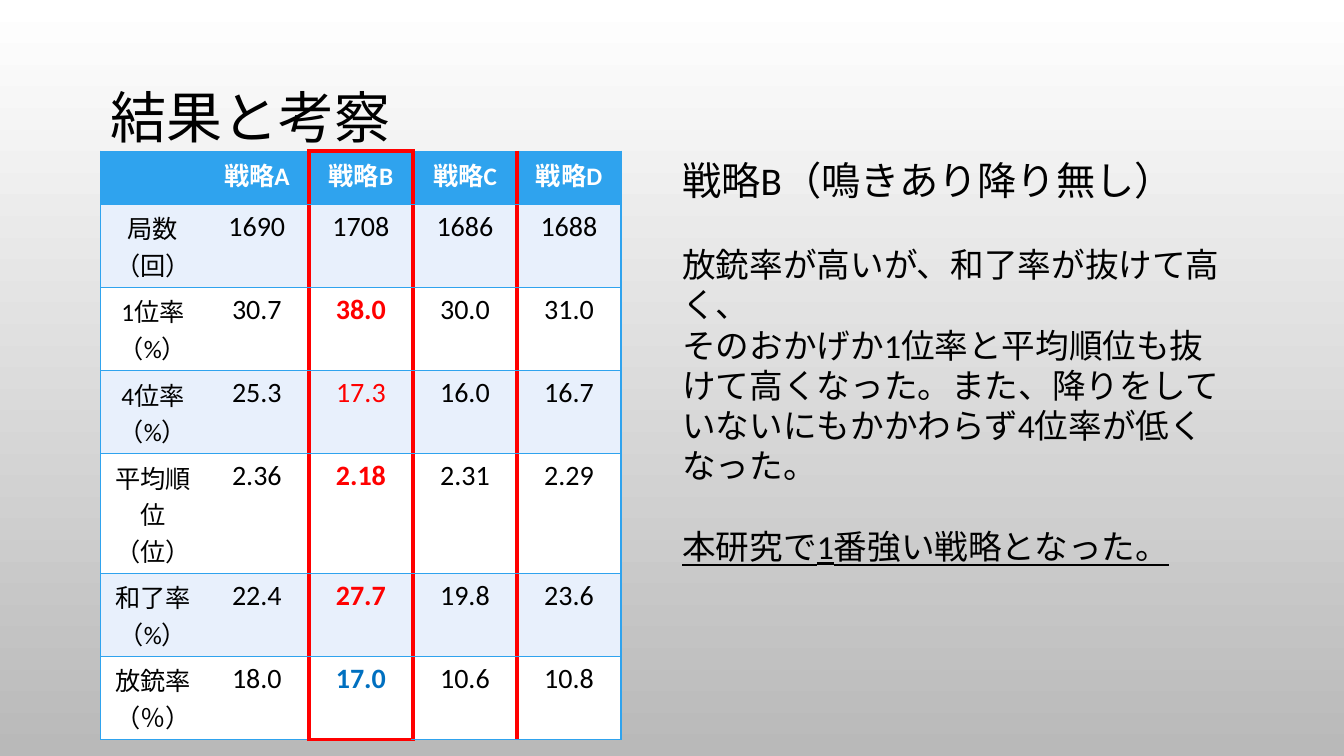
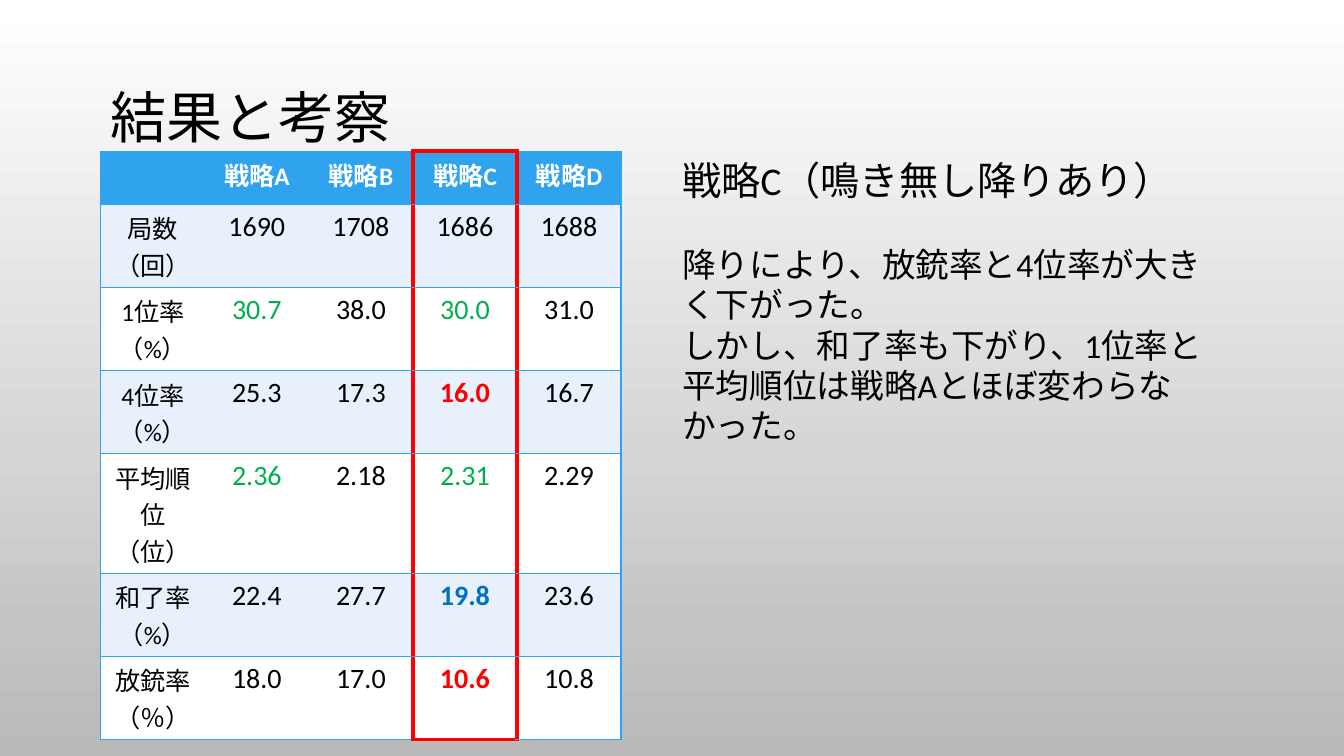
from lxml import etree
from pptx import Presentation
from pptx.dml.color import RGBColor
from pptx.enum import lang, text as t
from pptx.oxml import ns
from pptx.util import Inches, Pt

BLACK = RGBColor(0x00, 0x00, 0x00)
WHITE = RGBColor(0xFF, 0xFF, 0xFF)
GREY = RGBColor(0xB9, 0xB9, 0xB9)
SKY = RGBColor(0x2F, 0xA3, 0xEE)
PALE = RGBColor(0xE8, 0xF0, 0xFC)
RED = RGBColor(0xFF, 0x00, 0x00)
BLUE = RGBColor(0x00, 0x70, 0xC0)
GREEN = RGBColor(0x00, 0xB0, 0x50)

FONT = "Calibri"
PLAIN = "{2D5ABB26-0587-4C30-8999-92F81FD0307C}"  # table style without grid
HEIGHTS = [0.53, 0.77, 0.77, 0.77, 0.92, 0.77, 0.77]
DATA = [
    ["", "戦略A", "戦略B", "戦略C", "戦略D"],
    ["局数（回）", "1690", "1708", "1686", "1688"],
    ["1位率（%）", "30.7", "38.0", "30.0", "31.0"],
    ["4位率（%）", "25.3", "17.3", "16.0", "16.7"],
    ["平均順位（位）", "2.36", "2.18", "2.31", "2.29"],
    ["和了率（%）", "22.4", "27.7", "19.8", "23.6"],
    ["放銃率（％）", "18.0", "17.0", "10.6", "10.8"],
]


def write(para, words, size=24, color=BLACK, bold=False, under=False,
          align=t.PP_ALIGN.LEFT, before=None, lines=None):
    """Put formatted text in a paragraph."""
    para.alignment = align
    if before:
        para.space_before = Pt(before)
    if lines:
        para.line_spacing = lines
    run = para.add_run()
    run.text = words
    font = run.font
    font.name, font.size, font.bold = FONT, Pt(size), bold
    font.underline = under
    font.color.rgb = color
    font.language_id = lang.MSO_LANGUAGE_ID.JAPANESE


def edge(cell, side, color, width):
    """Draw one border of a cell; sides go in the order L, R, T, B."""
    props = cell._tc.get_or_add_tcPr()
    line = etree.SubElement(props, ns.qn("a:ln" + side), w=str(Pt(width)))
    fill = etree.SubElement(line, ns.qn("a:solidFill"))
    etree.SubElement(fill, ns.qn("a:srgbClr"), val=str(color))


def head(slide, words, left, top, width, height):
    """Title placeholder."""
    box = slide.shapes.title
    box.left, box.top = Inches(left), Inches(top)
    box.width, box.height = Inches(width), Inches(height)
    frame = box.text_frame
    frame.auto_size = t.MSO_AUTO_SIZE.NONE
    frame.vertical_anchor = t.MSO_ANCHOR.MIDDLE
    write(frame.paragraphs[0], words, size=40, lines=0.9)


def grid(slide, left, top, width, pick, marks, extra):
    """Result table with the picked column framed in red."""
    rows, cols = len(DATA), len(DATA[0])
    frame = slide.shapes.add_table(rows, cols, Inches(left), Inches(top),
                                   Inches(width), Inches(sum(HEIGHTS)))
    table = frame.table
    table._tbl.tblPr.find(ns.qn("a:tableStyleId")).text = PLAIN
    for row, height in zip(table.rows, HEIGHTS):
        row.height = Inches(height)

    for r, line in enumerate(DATA):
        reds = {pick, pick + 1} | (set(extra) if r else set())
        for c, words in enumerate(line):
            cell = table.cell(r, c)
            # Borders
            for side, pos in (("L", c), ("R", c + 1)):
                if pos in reds:
                    edge(cell, side, RED, 3)
                elif pos in (0, cols):
                    edge(cell, side, SKY, 1)
            for side, pos in (("T", r), ("B", r + 1)):
                if c == pick and pos in (0, rows):
                    edge(cell, side, RED, 3)
                else:
                    edge(cell, side, SKY, 1)
            # Fill and text
            cell.fill.solid()
            cell.fill.fore_color.rgb = SKY if r == 0 else (PALE if r % 2 else WHITE)
            color, bold = marks.get(words, (BLACK, False)) if r else (WHITE, True)
            if words:
                write(cell.text_frame.paragraphs[0], words, color=color, bold=bold,
                      size=20 if r and c else 18, align=t.PP_ALIGN.CENTER)


def notes(slide, left, top, width, height, paras):
    """Comment beside the table: a list of (text, format)."""
    box = slide.shapes.add_textbox(Inches(left), Inches(top),
                                   Inches(width), Inches(height))
    frame = box.text_frame
    frame.word_wrap = True
    frame.auto_size = t.MSO_AUTO_SIZE.SHAPE_TO_FIT_TEXT
    for i, (words, style) in enumerate(paras):
        para = frame.add_paragraph() if i else frame.paragraphs[0]
        write(para, words, **style)


def page(deck, pick, marks, tall, paras, extra=()):
    """One result slide: title, table and comment."""
    slide = deck.slides.add_slide(deck.slide_layouts[5])
    head(slide, "結果と考察", 1, 0.68, 11.33, 1.02)
    grid(slide, 1, 1.5, 5.16, pick, marks, extra)
    notes(slide, 6.67, 1.5, 5.67, tall, paras)


def main():
    deck = Presentation()
    deck.slide_width, deck.slide_height = Inches(13.33), Inches(7.5)

    # Shared background
    fill = deck.slide_master.background.fill
    fill.gradient()
    fill.gradient_angle = 270
    for stop, color in zip(fill.gradient_stops, (WHITE, GREY)):
        stop.color.rgb = color

    # Strategy B
    page(deck, 2, {"38.0": (RED, True), "17.3": (RED, False), "2.18": (RED, True),
                   "27.7": (RED, True), "17.0": (BLUE, True)}, 3.4, [
        ("戦略B（鳴きあり降り無し）", dict(size=28)),
        ("放銃率が高いが、和了率が抜けて高く、", dict(before=29)),
        ("そのおかげか1位率と平均順位も抜けて高くなった。"
         "また、降りをしていないにもかかわらず4位率が低くなった。", {}),
        ("本研究で1番強い戦略となった。", dict(before=29, under=True)),
    ], extra=[4])

    # Strategy C
    page(deck, 3, {"30.7": (GREEN, False), "30.0": (GREEN, False),
                   "2.36": (GREEN, False), "2.31": (GREEN, False),
                   "16.0": (RED, True), "19.8": (BLUE, True),
                   "10.6": (RED, True)}, 2.59, [
        ("戦略C（鳴き無し降りあり）", dict(size=28)),
        ("降りにより、放銃率と4位率が大きく下がった。", dict(before=29)),
        ("しかし、和了率も下がり、1位率と平均順位は戦略Aとほぼ変わらなかった。", {}),
    ])
    deck.save("out.pptx")


if __name__ == "__main__":
    main()
